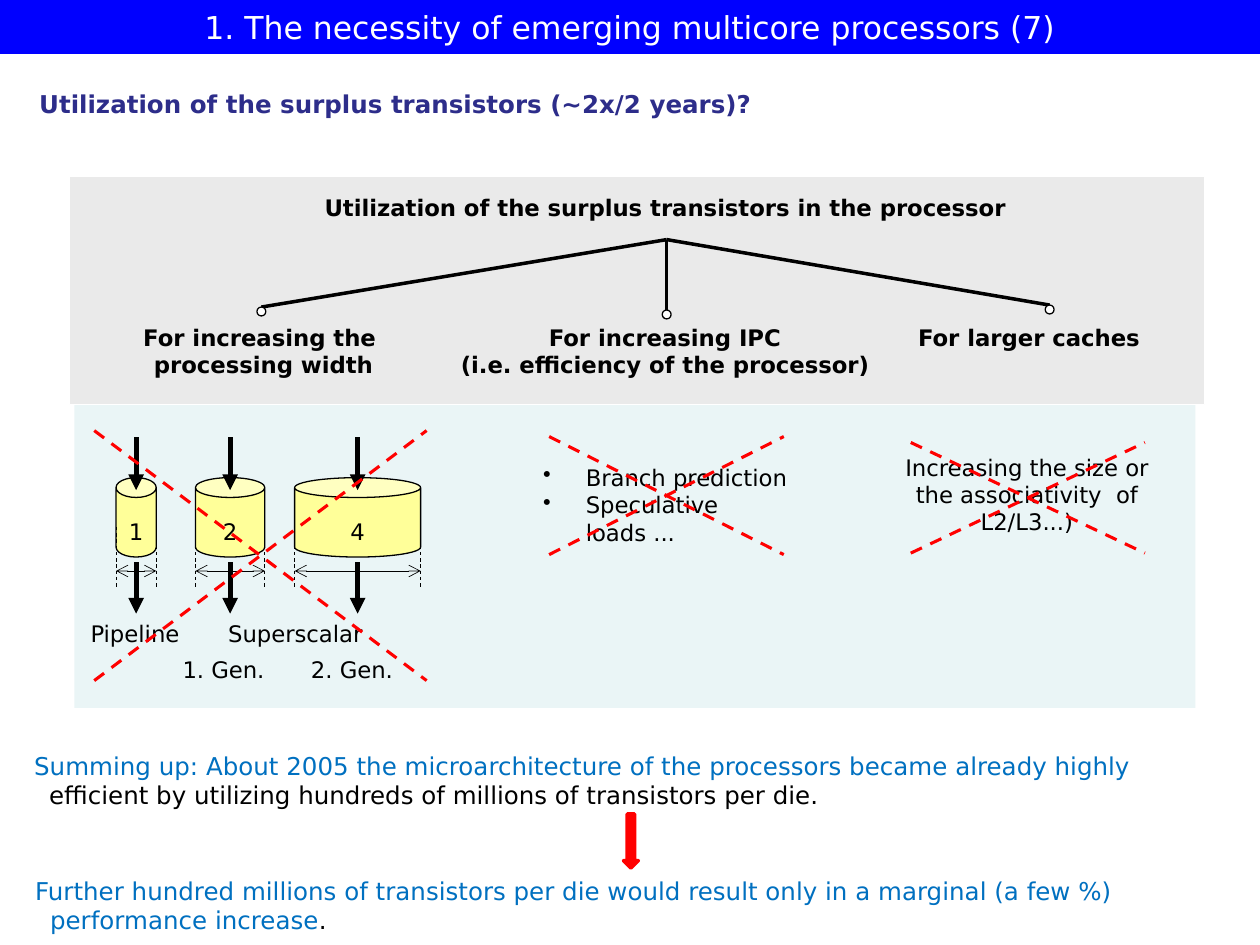
from dataclasses import dataclass

from lxml.etree import SubElement
from pptx import Presentation
from pptx.dml.color import RGBColor
from pptx.enum.dml import MSO_LINE_DASH_STYLE as Dash
from pptx.enum.shapes import MSO_CONNECTOR as Connector, MSO_SHAPE as Preset
from pptx.enum.text import MSO_ANCHOR as Anchor, PP_ALIGN as Align
from pptx.oxml.ns import qn
from pptx.util import Cm, Pt


@dataclass(frozen=True)
class Theme:
    font: str = "DejaVu Sans"
    title_size: int = 18
    statement_size: int = 14
    label_size: int = 13
    white: str = "FFFFFF"
    black: str = "000000"
    title_bar: str = "0000FF"
    heading: str = "2D2D8A"
    statement: str = "0070C0"
    header_panel: str = "EAEAEA"
    body_panel: str = "EAF5F6"
    can: str = "FFFF99"
    red: str = "FF0000"


THEME = Theme()


class SlideBuilder:
    def __init__(self, slide, theme):
        self.slide = slide
        self.theme = theme

    def shape(self, preset, left, top, width, height, fill, line=None, weight=0.75):
        shape = self.slide.shapes.add_shape(
            preset, Cm(left), Cm(top), Cm(width), Cm(height))
        shape.shadow.inherit = False
        shape.fill.solid()
        shape.fill.fore_color.rgb = RGBColor.from_string(fill)
        if line:
            shape.line.color.rgb = RGBColor.from_string(line)
            shape.line.width = Pt(weight)
        else:
            shape.line.fill.background()
        return shape

    def line(self, x1, y1, x2, y2, weight, color=None, dashed=False, head=None, tail=None):
        connector = self.slide.shapes.add_connector(
            Connector.STRAIGHT, Cm(x1), Cm(y1), Cm(x2), Cm(y2))
        connector.line.color.rgb = RGBColor.from_string(color or self.theme.black)
        connector.line.width = Pt(weight)
        if dashed:
            connector.line.dash_style = Dash.DASH
        outline = connector.line._get_or_add_ln()
        for tag, kind in (("a:headEnd", head), ("a:tailEnd", tail)):
            if kind:
                SubElement(outline, qn(tag), type=kind)
        SubElement(connector._element.spPr, qn("a:effectLst"))
        return connector

    def style(self, paragraph, size, color, bold=False, align=Align.LEFT):
        paragraph.alignment = align
        font = paragraph.font
        font.name, font.size, font.bold = self.theme.font, Pt(size), bold
        font.color.rgb = RGBColor.from_string(color)

    def text(self, lines, left, top, width, height, size=None, color=None,
             bold=False, align=Align.LEFT):
        box = self.slide.shapes.add_textbox(Cm(left), Cm(top), Cm(width), Cm(height))
        frame = box.text_frame
        frame.word_wrap = True
        frame.margin_left = frame.margin_right = 0
        frame.margin_top = frame.margin_bottom = 0
        frame.text = "\n".join(lines)
        for paragraph in frame.paragraphs:
            self.style(paragraph, size or self.theme.label_size,
                       color or self.theme.black, bold, align)
        return frame

    def centred(self, lines, center, top, width, bold=False):
        return self.text(lines, center - width / 2, top, width, 0.55 * len(lines),
                         bold=bold, align=Align.CENTER)

    def bullets(self, lines, left, top, width, height, indent):
        for paragraph in self.text(lines, left, top, width, height).paragraphs:
            properties = paragraph._p.get_or_add_pPr()
            properties.set("marL", str(Cm(indent)))
            properties.set("indent", str(-Cm(indent)))
            SubElement(properties, qn("a:buChar"), char="•").getparent()
            # The bullet comes before the default run properties
            properties.insert(0, properties.find(qn("a:buChar")))

    def statement(self, lines, left, top):
        frame = self.text(lines, left, top, 24.3, 1.2,
                          self.theme.statement_size, self.theme.statement)
        second = frame.paragraphs[1]
        second._p.get_or_add_pPr().set("marL", str(Cm(0.3)))
        return second

    def cross(self, left, top, right, bottom):
        for start, end in ((top, bottom), (bottom, top)):
            self.line(left, start, right, end, 1.75, self.theme.red, dashed=True)

    def pipeline(self, label, left, width):
        top, height, cap = 9.63, 1.6, 0.4
        center, right = left + width / 2, left + width
        can = self.shape(Preset.CAN, left, top, width, height,
                         self.theme.can, self.theme.black)
        can.adjustments[0] = cap / min(width, height)
        for start, end in ((8.81, 9.88), (11.33, 12.37)):
            self.line(center, start, center, end, 3, tail="triangle")
        for edge in (left, right):
            self.line(edge, 10.62, edge, 11.84, 0.5, dashed=True)
        self.line(left, 11.51, right, 11.51, 0.4, head="arrow", tail="arrow")
        self.centred([label], center, 10.44, 0.8)


def main():
    presentation = Presentation()
    presentation.slide_width, presentation.slide_height = Cm(25.4), Cm(19.05)
    slide = presentation.slides.add_slide(presentation.slide_layouts[6])
    builder = SlideBuilder(slide, THEME)

    # Title bar and heading
    bar = builder.shape(Preset.RECTANGLE, 0, 0, 25.4, 1.09, THEME.title_bar)
    bar.text_frame.text = "1. The necessity of emerging multicore processors (7)"
    bar.text_frame.vertical_anchor = Anchor.MIDDLE
    builder.style(bar.text_frame.paragraphs[0], THEME.title_size, THEME.white,
                  align=Align.CENTER)
    builder.text(["Utilization of the surplus transistors (~2x/2 years)?"],
                 0.79, 1.8, 16, 0.6, THEME.statement_size, THEME.heading, bold=True)

    # Panels
    builder.shape(Preset.RECTANGLE, 1.5, 8.15, 22.6, 6.12, THEME.body_panel)
    builder.shape(Preset.RECTANGLE, 1.4, 3.56, 22.89, 4.6,
                  THEME.header_panel, THEME.white)

    # Tree of uses
    builder.centred(["Utilization of the surplus transistors in the processor"],
                    13.4, 3.91, 17.6, bold=True)
    branches = [
        (["For increasing the", " processing width"], 5.23, 5.27, 6.28),
        (["For increasing IPC", "(i.e. efficiency of the processor)"], 13.4, 13.44, 6.34),
        (["For larger caches"], 20.74, 21.16, 6.24),
    ]
    dot = 0.18
    for lines, center, end, y in branches:
        builder.line(13.44, 4.83, end, y - dot / 2, 0)
        builder.shape(Preset.OVAL, end - dot / 2, y - dot / 2, dot, dot,
                      THEME.white, THEME.black, 0)
        builder.centred(lines, center, 6.53, 8.8, bold=True)

    # Processing width
    for label, left, width in (("1", 2.34, 0.81), ("2", 3.94, 1.4), ("4", 5.94, 2.54)):
        builder.pipeline(label, left, width)
    builder.centred(["Pipeline"], 2.72, 12.5, 2.6)
    builder.text(["Superscalar"], 4.6, 12.5, 3.2, 0.55)
    for generation, left in (("1. Gen.", 3.68), ("2. Gen.", 6.27)):
        builder.text([generation], left, 13.21, 2, 0.55)

    # Efficiency and caches
    builder.bullets(["Branch prediction", "Speculative loads ..."],
                    10.95, 9.35, 5.2, 1.65, 0.86)
    builder.centred(["Increasing the size or", "the associativity  of", "L2/L3...)"],
                    20.7, 9.14, 6)

    # Crossed-out options
    builder.cross(1.9, 8.68, 8.6, 13.72)
    builder.cross(11.07, 8.8, 15.8, 11.18)
    builder.cross(18.36, 8.92, 23.08, 11.15)

    # Conclusions
    builder.statement(
        ["Summing up: About 2005 the microarchitecture of the processors became already highly",
         "efficient by utilizing hundreds of millions of transistors per die."],
        0.69, 15.14).font.color.rgb = RGBColor.from_string(THEME.black)
    builder.shape(Preset.DOWN_ARROW, 12.57, 16.41, 0.3, 1.09, THEME.red, THEME.red, 2)
    ending = builder.statement(
        ["Further hundred millions of transistors per die would result only in a marginal (a few %)",
         "performance increase"], 0.71, 17.65)
    period = ending.add_run()
    period.text = "."
    period.font.color.rgb = RGBColor.from_string(THEME.black)

    presentation.save("out.pptx")


if __name__ == "__main__":
    main()
